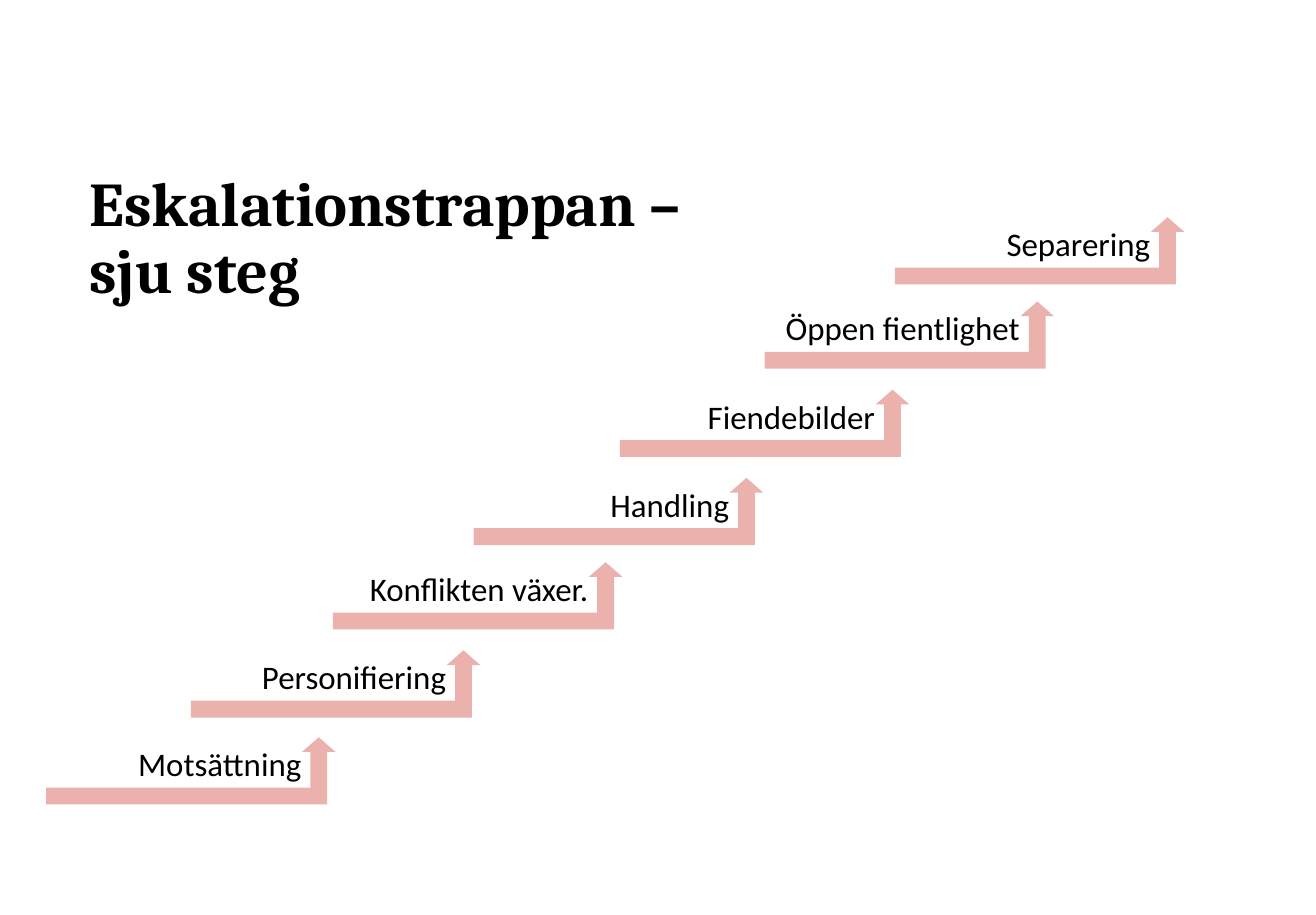
import pptx
import pptx.dml.color
import pptx.enum.shapes
import pptx.enum.text
import pptx.util

Inches = pptx.util.Inches
ANCHOR = pptx.enum.text.MSO_ANCHOR
ALIGN = pptx.enum.text.PP_ALIGN

TITLE = "Eskalationstrappan – sju steg"
# Step name, then left and top of its arrow in inches
STEPS = [
    ("Motsättning", 0.35, 5.6),
    ("Personifiering", 1.45, 4.94),
    ("Konflikten växer.", 2.53, 4.27),
    ("Handling", 3.6, 3.63),
    ("Fiendebilder", 4.71, 2.96),
    ("Öppen fientlighet", 5.81, 2.29),
    ("Separering", 6.8, 1.65),
]
THEME = {
    "text": "000000",
    "arrow": "EAB1AD",
    "title_font": "Cambria",
    "label_font": "Calibri",
    "title_size": 34,
    "label_size": 18,
}
ARROW_SIZE = (2.2, 0.51)
ARROW_ADJUSTMENTS = (0.25, 0.25, 0.22)
LABEL_SIZE = (2.09, 0.4)
LABEL_SHIFT = 0.15


def rgb(name):
    return pptx.dml.color.RGBColor.from_string(THEME[name])


def add_text(slide, text, box, *, font, size, bold=False, align=ALIGN.LEFT,
             anchor=ANCHOR.TOP, insets=(0, 0, 0, 0), line_spacing=1.0):
    """Add a wrapping text box; box is left, top, width, height in inches."""
    frame = slide.shapes.add_textbox(*map(Inches, box)).text_frame
    frame.word_wrap = True
    frame.vertical_anchor = anchor
    (frame.margin_left, frame.margin_top,
     frame.margin_right, frame.margin_bottom) = map(Inches, insets)
    paragraph = frame.paragraphs[0]
    paragraph.alignment = align
    paragraph.line_spacing = line_spacing
    run = paragraph.add_run()
    run.text = text
    run.font.name = THEME[font]
    run.font.size = pptx.util.Pt(THEME[size])
    run.font.bold = bold
    run.font.color.rgb = rgb("text")


def add_step_arrow(slide, left, top):
    arrow = slide.shapes.add_shape(
        pptx.enum.shapes.MSO_SHAPE.BENT_UP_ARROW,
        *map(Inches, (left, top, *ARROW_SIZE)))
    for index, value in enumerate(ARROW_ADJUSTMENTS):
        arrow.adjustments[index] = value
    arrow.shadow.inherit = False
    arrow.fill.solid()
    arrow.fill.fore_color.rgb = rgb("arrow")
    arrow.line.fill.background()


def main():
    deck = pptx.Presentation()
    deck.slide_width, deck.slide_height = Inches(10), Inches(6.95)
    slide = deck.slides.add_slide(deck.slide_layouts[6])

    add_text(slide, TITLE, (0.68, 1.15, 4.7, 1.35), font="title_font",
             size="title_size", bold=True, anchor=ANCHOR.MIDDLE,
             line_spacing=0.9)
    for step, left, top in STEPS:
        add_text(slide, step, (left - LABEL_SHIFT, top, *LABEL_SIZE),
                 font="label_font", size="label_size", align=ALIGN.RIGHT,
                 insets=(0.1, 0.05, 0, 0.05))
        add_step_arrow(slide, left, top)

    deck.save("out.pptx")


if __name__ == "__main__":
    main()
